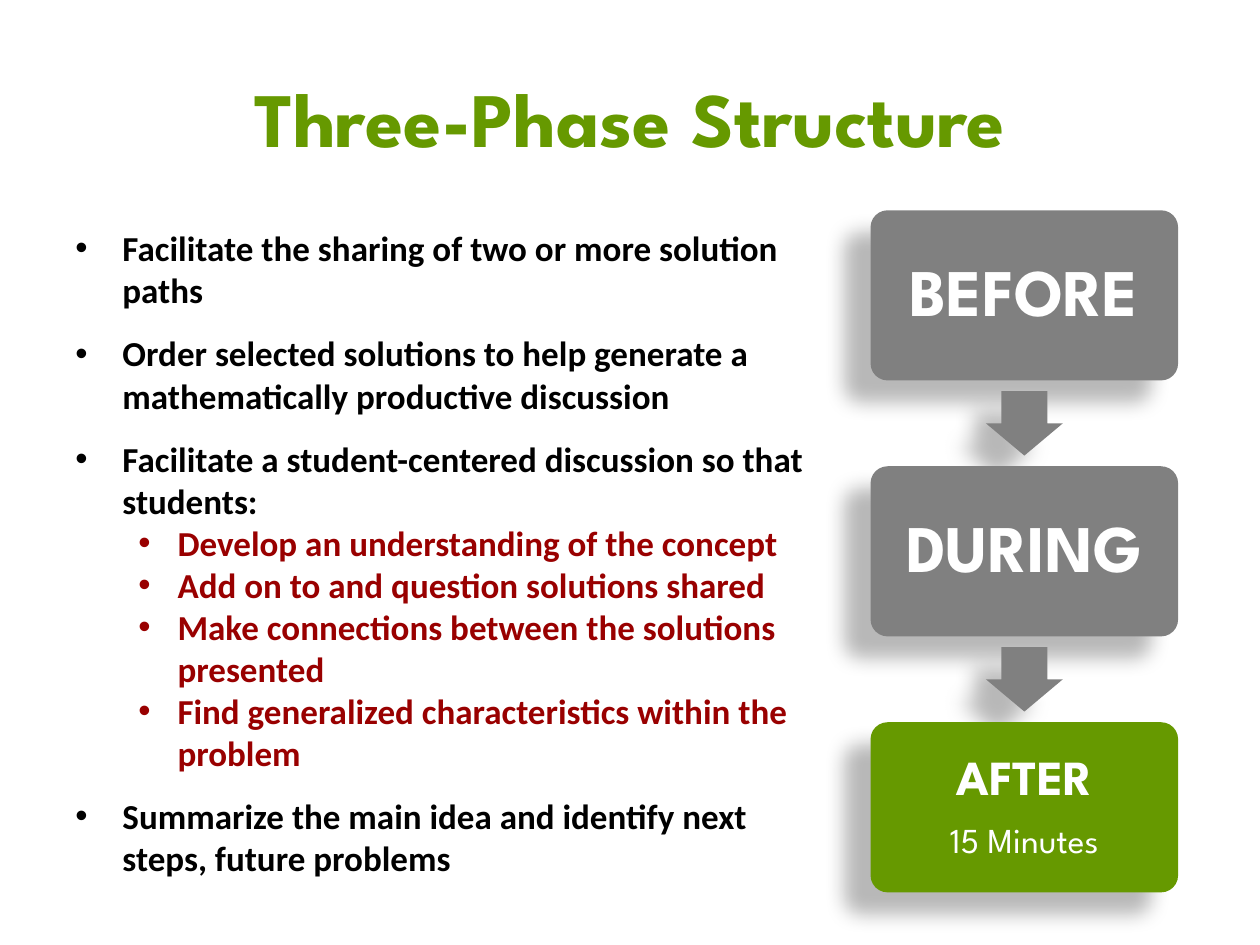
from lxml import etree
from pptx import Presentation
from pptx.dml.color import RGBColor
from pptx.enum import shapes, text
from pptx.oxml import ns
from pptx.util import Cm, Pt

COLORS = {"green": "669900", "gray": "808080", "red": "990000",
          "black": "000000", "white": "FFFFFF"}
HEAD_FONT, BODY_FONT = "League Spartan", "Calibri"

POINTS = [  # level, text, space before, space after
    (0, "Facilitate the sharing of two or more solution paths", 0, 6),
    (0, "Order selected solutions to help generate a mathematically "
        "productive discussion", 6, 6),
    (0, "Facilitate a student-centered discussion so that students:", 6, 0),
    (1, "Develop an understanding of the concept", 0, 0),
    (1, "Add on to and question solutions shared", 0, 0),
    (1, "Make connections between the solutions presented", 0, 0),
    (1, "Find generalized characteristics within the problem", 0, 6),
    (0, "Summarize the main idea and identify next steps, future problems", 6, 6),
]
LEVELS = [(0.95, 0.95, "black"), (2.06, 0.79, "red")]  # margin, hanging, colour

PHASES = [  # fill, inset, lines of (text, size, bold)
    ("gray", 0.5, [("BEFORE", 38, True)]),
    ("gray", 0.5, [("DURING", 38, True)]),
    ("green", 0.4, [("AFTER", 28, True), ("15 Minutes", 20, False)]),
]


def rgb(name):
    return RGBColor.from_string(COLORS[name])


def add_run(p, words, font, size, color, bold=True):
    r = p.add_run()
    r.text = words
    r.font.name, r.font.size, r.font.bold = font, Pt(size), bold
    r.font.color.rgb = rgb(color)


def add_shadow(sp):
    """Cast a soft shadow to the lower left."""
    effects = etree.SubElement(sp._element.spPr, ns.qn("a:effectLst"))
    shadow = etree.SubElement(effects, ns.qn("a:outerShdw"), {
        "blurRad": str(Pt(11.8)), "dist": str(Pt(19.7)),
        "dir": str(141 * 60000), "algn": "tl", "rotWithShape": "0"})
    color = etree.SubElement(shadow, ns.qn("a:srgbClr"), val=COLORS["black"])
    etree.SubElement(color, ns.qn("a:alpha"), val="28000")


def add_block(s, kind, left, top, width, height, fill, adjustments):
    sp = s.shapes.add_shape(kind, Cm(left), Cm(top), Cm(width), Cm(height))
    for i, value in enumerate(adjustments):
        sp.adjustments[i] = value
    sp.fill.solid()
    sp.fill.fore_color.rgb = rgb(fill)
    sp.line.fill.background()
    add_shadow(sp)
    return sp


def add_title(s, left, top, width, height):
    sp = s.shapes.title
    sp.left, sp.top, sp.width, sp.height = map(Cm, (left, top, width, height))
    tf = sp.text_frame
    tf.vertical_anchor = text.MSO_ANCHOR.MIDDLE
    p = tf.paragraphs[0]
    p.alignment = text.PP_ALIGN.CENTER
    add_run(p, "Three-Phase Structure", HEAD_FONT, 44, "green")


def add_points(s, left, top, width, height):
    tf = s.shapes.add_textbox(Cm(left), Cm(top), Cm(width), Cm(height)).text_frame
    tf.word_wrap = True
    for i, (level, words, before, after) in enumerate(POINTS):
        p = tf.add_paragraph() if i else tf.paragraphs[0]
        margin, hanging, color = LEVELS[level]
        p.level = level
        pPr = p._p.get_or_add_pPr()
        pPr.set("marL", str(Cm(margin)))
        pPr.set("indent", str(-Cm(hanging)))
        etree.SubElement(pPr, ns.qn("a:buFont"), typeface="Arial")
        etree.SubElement(pPr, ns.qn("a:buChar"), char="•")
        p.space_before, p.space_after = Pt(before), Pt(after)
        add_run(p, words, BODY_FONT, 20, color)


def add_card(s, left, top, width, height, fill, inset, lines):
    sp = add_block(s, shapes.MSO_SHAPE.ROUNDED_RECTANGLE,
                   left, top, width, height, fill, [0.1])
    tf = sp.text_frame
    tf.word_wrap = True
    tf.vertical_anchor = text.MSO_ANCHOR.MIDDLE
    tf.margin_left = tf.margin_right = tf.margin_top = tf.margin_bottom = Cm(inset)
    for i, (words, size, bold) in enumerate(lines):
        p = tf.add_paragraph() if i else tf.paragraphs[0]
        p.alignment = text.PP_ALIGN.CENTER
        p.line_spacing = 0.9
        p.space_after = Pt(0.35 * size)
        add_run(p, words, HEAD_FONT, size, "white", bold)


def add_phases(s, left, top, width, height):
    """Stack the phase cards, with a down arrow in each gap."""
    card_h, arrow_w, arrow_h = 3.43, 1.3, 1.55
    step = (height - card_h) / (len(PHASES) - 1)
    for i, (fill, inset, lines) in enumerate(PHASES):
        y = top + i * step
        if i:
            gap_middle = y - (step - card_h) / 2
            arrow = add_block(s, shapes.MSO_SHAPE.RIGHT_ARROW,
                              left + (width - arrow_w) / 2, gap_middle - arrow_h / 2,
                              arrow_w, arrow_h, "gray", [0.6, 0.5])
            arrow.rotation = 90
        add_card(s, left, y, width, card_h, fill, inset, lines)


def main():
    prs = Presentation()
    prs.slide_width, prs.slide_height = Cm(25.4), Cm(19.05)
    s = prs.slides.add_slide(prs.slide_layouts[5])
    add_phases(s, 17.55, 4.24, 6.2, 13.75)
    add_title(s, 1.27, 0.76, 22.86, 3.18)
    add_points(s, 1.27, 4.45, 15.24, 10.97)
    prs.save("out.pptx")


if __name__ == "__main__":
    main()
